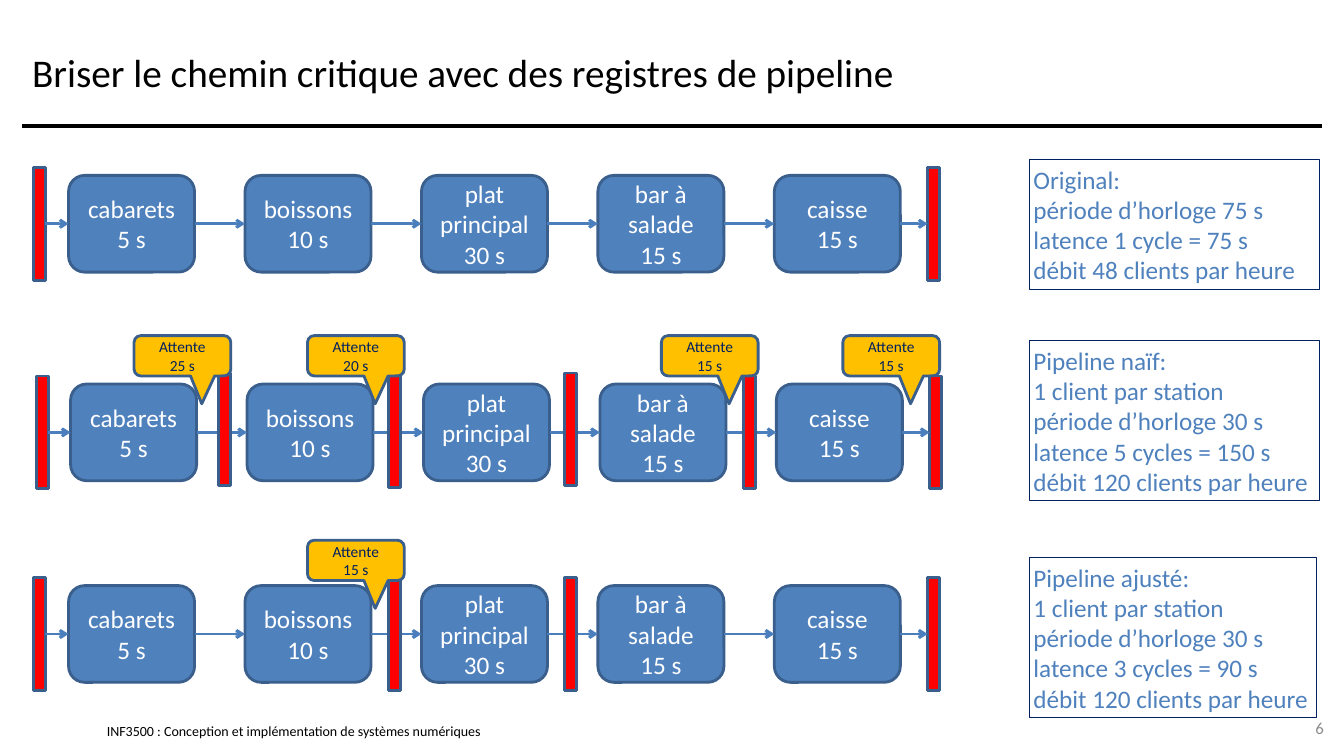
from dataclasses import dataclass

from lxml import etree
from pptx import Presentation
from pptx.dml.color import RGBColor
from pptx.enum.shapes import MSO_CONNECTOR, MSO_SHAPE
from pptx.enum.text import MSO_ANCHOR, PP_ALIGN
from pptx.oxml.ns import qn
from pptx.util import Pt

STRAIGHT = MSO_CONNECTOR.STRAIGHT
RECT, ROUNDED = MSO_SHAPE.RECTANGLE, MSO_SHAPE.ROUNDED_RECTANGLE
CALLOUT = MSO_SHAPE.ROUNDED_RECTANGULAR_CALLOUT
MIDDLE = MSO_ANCHOR.MIDDLE
LEFT, CENTER, RIGHT = PP_ALIGN.LEFT, PP_ALIGN.CENTER, PP_ALIGN.RIGHT
LEFT_SIDE, RIGHT_SIDE = 1, 3

TITLE = "Briser le chemin critique avec des registres de pipeline"
COURSE = "INF3500 : Conception et implémentation de systèmes numériques"
PAGE = "6"
STATIONS = [
    ["cabarets", "5 s"],
    ["boissons", "10 s"],
    ["plat principal", "30 s"],
    ["bar à salade", "15 s"],
    ["caisse", "15 s"],
]
PIPELINES = [
    dict(
        left=33, axis=222, first=68, registers=[], waits=[], wait_top=0,
        summary=["Original:", "période d’horloge 75 s", "latence 1 cycle = 75 s",
                 "débit 48 clients par heure"],
        summary_at=(1021, 158, 288, 129),
    ),
    dict(
        left=36, axis=429, first=70, wait_top=333,
        registers=[(217, 370), (385, 372), (560, 370), (737, 373)],
        waits=[(133, "25 s"), (305, "20 s"), (656, "15 s"), (836, "15 s")],
        summary=["Pipeline naïf:", "1 client par station", "période d’horloge 30 s",
                 "latence 5 cycles = 150 s", "débit 120 clients par heure"],
        summary_at=(1021, 338, 288, 159),
    ),
    dict(
        left=33, axis=629, first=68, wait_top=536,
        registers=[(385, 573), (560, 573)],
        waits=[(305, "15 s")],
        summary=["Pipeline ajusté:", "1 client par station", "période d’horloge 30 s",
                 "latence 3 cycles = 90 s", "débit 120 clients par heure"],
        summary_at=(1021, 553, 285, 159),
    ),
]

PX = 9144
STATION_W, STATION_H, STATION_STEP = 125, 96, 175
REGISTER_W, REGISTER_H = 12, 112
WAIT_W, WAIT_H = 96, 40
EXIT_GAP = 27


@dataclass(frozen=True)
class Theme:
    font: str = "Calibri"
    black: str = "000000"
    white: str = "FFFFFF"
    blue: str = "4F81BD"
    arrow: str = "4B7EBC"
    edge: str = "3A5F8C"
    navy: str = "002060"
    red: str = "FF0000"
    amber: str = "FFC000"
    gray: str = "8C8C8C"
    title_size: int = 28
    body_size: int = 18
    page_size: int = 12
    wait_size: int = 11
    footer_size: int = 10


theme = Theme()
deck = Presentation()
deck.slide_width, deck.slide_height = 1333 * PX, 750 * PX
slide = deck.slides.add_slide(deck.slide_layouts[6])
shapes = slide.shapes


def rgb(color):
    return RGBColor.from_string(color)


def write(holder, lines, size, color, align=LEFT, inset=(10, 5)):
    frame = holder.text_frame
    frame.word_wrap = True
    frame.vertical_anchor = MIDDLE
    frame.margin_left = frame.margin_right = inset[0] * PX
    frame.margin_top = frame.margin_bottom = inset[1] * PX
    frame.text = "\n".join(lines)
    for paragraph in frame.paragraphs:
        paragraph.alignment = align
        paragraph.font.name = theme.font
        paragraph.font.size = Pt(size)
        paragraph.font.color.rgb = rgb(color)


def label(at, text, size, color, **text_format):
    write(shapes.add_textbox(*(n * PX for n in at)), [text], size, color, **text_format)


def block(kind, at, fill=None, line=theme.edge, weight=2):
    shape = shapes.add_shape(kind, *(n * PX for n in at))
    shape.shadow.inherit = False
    if fill:
        shape.fill.solid()
        shape.fill.fore_color.rgb = rgb(fill)
    else:
        shape.fill.background()
    shape.line.color.rgb = rgb(line)
    shape.line.width = Pt(weight)
    return shape


def connector(start, end, color, weight):
    line = shapes.add_connector(STRAIGHT, *(n * PX for n in start + end))
    line.line.color.rgb = rgb(color)
    line.line.width = Pt(weight)
    etree.SubElement(line._element.spPr, qn("a:effectLst"))
    return line


def arrow(source, target):
    line = connector((0, 0), (0, 0), theme.arrow, 2)
    line.begin_connect(source, RIGHT_SIDE)
    line.end_connect(target, LEFT_SIDE)
    etree.SubElement(line.line._get_or_add_ln(), qn("a:tailEnd"), type="arrow")


def register(x, top):
    return block(RECT, (x, top, REGISTER_W, REGISTER_H), theme.red)


def draw_pipeline(row):
    register_top = row["axis"] - REGISTER_H // 2
    station_top = row["axis"] - STATION_H // 2
    chain = [register(row["left"], register_top)]
    for i, station in enumerate(STATIONS):
        x = row["first"] + i * STATION_STEP
        box = block(ROUNDED, (x, station_top, STATION_W, STATION_H), theme.blue)
        write(box, station, theme.body_size, theme.white, align=CENTER)
        chain.append(box)
    chain.append(register(x + STATION_W + EXIT_GAP, register_top))
    for source, target in zip(chain, chain[1:]):
        arrow(source, target)

    for x, top in row["registers"]:
        register(x, top)
    for x, delay in row["waits"]:
        wait = block(CALLOUT, (x, row["wait_top"], WAIT_W, WAIT_H), theme.amber)
        wait.adjustments[0], wait.adjustments[1] = 0.2, 1.19
        write(wait, ["Attente", delay], theme.wait_size, theme.navy, align=CENTER)

    summary = block(RECT, row["summary_at"], line=theme.navy, weight=0.75)
    write(summary, row["summary"], theme.body_size, theme.blue, inset=(4, 4))


def main():
    label((106, 717, 511, 17), COURSE, theme.footer_size, theme.black, inset=(0, 0))
    connector((22, 125), (1311, 125), theme.black, 3)
    label((22, 17, 1289, 108), TITLE, theme.title_size, theme.black)
    for row in PIPELINES:
        draw_pipeline(row)
    label((1256, 702, 67, 40), PAGE, theme.page_size, theme.gray, align=RIGHT)
    deck.save("out.pptx")


if __name__ == "__main__":
    main()
